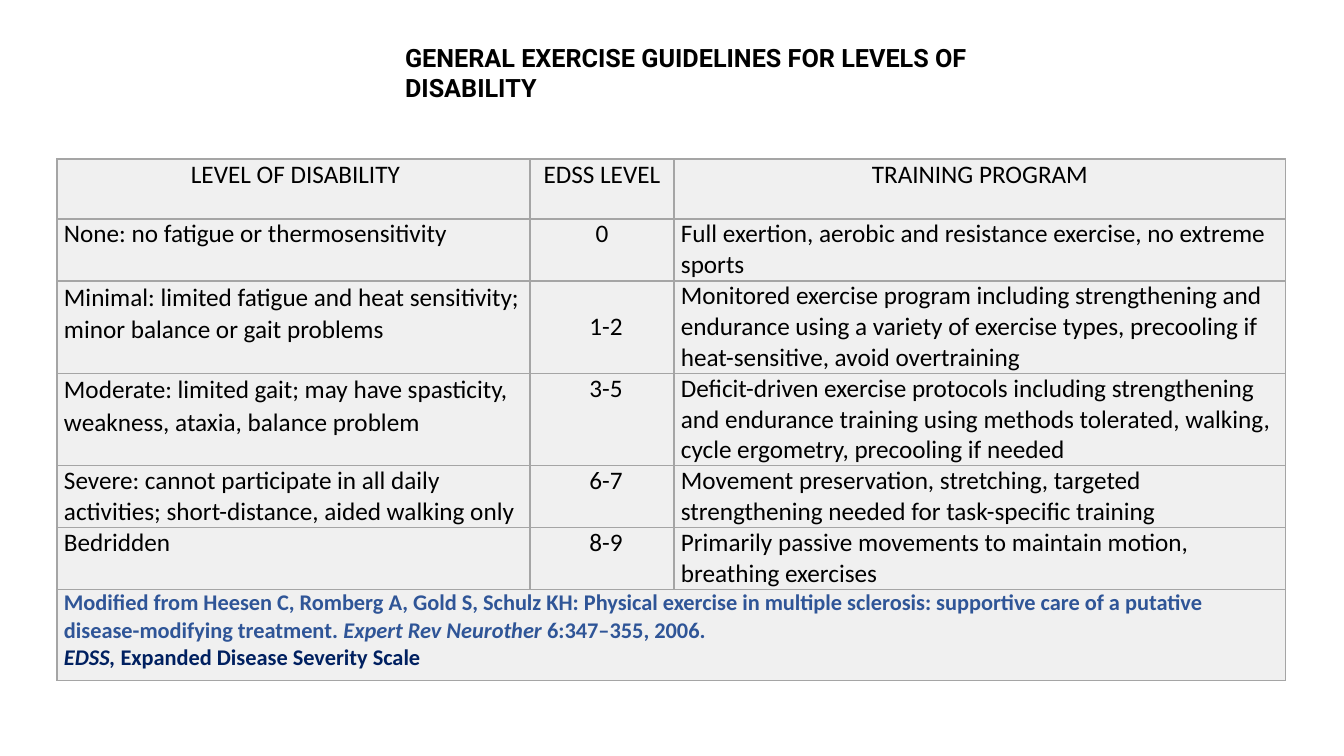
from lxml.etree import SubElement
from pptx import Presentation
from pptx.dml.color import RGBColor as RGB
from pptx.enum.text import MSO_ANCHOR as ANCHOR, MSO_AUTO_SIZE as FIT, PP_ALIGN as ALIGN
from pptx.oxml.ns import qn
from pptx.util import Pt

EMU_PER_PX = 914400 / 100.8
COLORS = {"text": "000000", "cell": "F0F0F0", "border": "A5A5A5",
          "source": "2F5597", "abbrev": "002060"}
COL_WIDTHS = [473, 144, 612]
ROW_HEIGHTS = [60, 62, 92, 92, 62, 62, 91]
HEADER = ["LEVEL OF DISABILITY", "EDSS LEVEL", "TRAINING PROGRAM"]
LEVELS = [
    ("None: no fatigue or thermosensitivity", "0",
     "Full exertion, aerobic and resistance exercise, no extreme sports"),
    ("Minimal: limited fatigue and heat sensitivity; minor balance or gait problems", "1-2",
     "Monitored exercise program including strengthening and endurance using a variety of "
     "exercise types, precooling if heat-sensitive, avoid overtraining"),
    ("Moderate: limited gait; may have spasticity, weakness, ataxia, balance problem", "3-5",
     "Deficit-driven exercise protocols including strengthening and endurance training using "
     "methods tolerated, walking, cycle ergometry, precooling if needed"),
    ("Severe: cannot participate in all daily activities; short-distance, aided walking only",
     "6-7",
     "Movement preservation, stretching, targeted strengthening needed for task-specific training"),
    ("Bedridden", "8-9",
     "Primarily passive movements to maintain motion, breathing exercises"),
]
FOOTNOTE = [
    ("source", [
        ("Modified from Heesen C, Romberg A, Gold S, Schulz KH: Physical exercise in multiple "
         "sclerosis: supportive care of a putative disease-modifying treatment. ", False),
        ("Expert Rev Neurother ", True),
        ("6:347–355, 2006.", False)]),
    ("abbrev", [("EDSS, ", True), ("Expanded Disease Severity Scale", False)]),
]


def px(n):
    return round(n * EMU_PER_PX)


def add_run(p, text, size=18, color="text", bold=False, italic=False, font="Calibri"):
    r = p.add_run()
    r.text = text
    r.font.name, r.font.size = font, Pt(size)
    r.font.bold, r.font.italic = bold, italic
    r.font.color.rgb = RGB.from_string(COLORS[color])


def add_title(s, text):
    sp = s.shapes.title
    sp.left, sp.top, sp.width, sp.height = px(395), px(37), px(637), px(40)
    tf = sp.text_frame
    tf.word_wrap, tf.auto_size, tf.vertical_anchor = True, FIT.NONE, ANCHOR.TOP
    p = tf.paragraphs[0]
    p.alignment = ALIGN.LEFT
    add_run(p, text, bold=True, font="Roboto")


def style_cell(cell):
    cell.margin_left = cell.margin_right = px(7)
    cell.margin_top = cell.margin_bottom = 0
    tc_pr = cell._tc.get_or_add_tcPr()
    for side in ("a:lnL", "a:lnR", "a:lnT", "a:lnB"):
        ln = SubElement(tc_pr, qn(side), w=str(Pt(1)))
        fill = SubElement(ln, qn("a:solidFill"))
        SubElement(fill, qn("a:srgbClr"), val=COLORS["border"])
    cell.fill.solid()
    cell.fill.fore_color.rgb = RGB.from_string(COLORS["cell"])


def fill_cell(cell, text, align=ALIGN.LEFT, indent=0, spacing=None):
    p = cell.text_frame.paragraphs[0]
    p.alignment, p.line_spacing = align, spacing
    p._p.get_or_add_pPr().set("marL", str(px(indent)))
    add_run(p, text)


def fill_footnote(cell):
    tf = cell.text_frame
    for i, (color, runs) in enumerate(FOOTNOTE):
        p = tf.add_paragraph() if i else tf.paragraphs[0]
        for text, italic in runs:
            add_run(p, text, 16, color, True, italic)


def add_guideline_table(s):
    frame = s.shapes.add_table(len(ROW_HEIGHTS), len(COL_WIDTHS), px(57), px(159),
                               px(sum(COL_WIDTHS)), px(sum(ROW_HEIGHTS)))
    table = frame.table
    table.first_row = table.horz_banding = False
    for col, width in zip(table.columns, COL_WIDTHS):
        col.width = px(width)
    for row, height in zip(table.rows, ROW_HEIGHTS):
        row.height = px(height)
    for cell in table.iter_cells():
        style_cell(cell)

    for c, text in enumerate(HEADER):
        fill_cell(table.cell(0, c), text, ALIGN.CENTER, 0 if c else 4)
    for r, (level, edss, program) in enumerate(LEVELS, 1):
        fill_cell(table.cell(r, 0), level, spacing=1.05 if r in (2, 3) else None)
        fill_cell(table.cell(r, 1), edss, ALIGN.CENTER, 8 if r > 1 else 0)
        fill_cell(table.cell(r, 2), program)
    table.cell(2, 1).vertical_anchor = ANCHOR.MIDDLE

    last = len(ROW_HEIGHTS) - 1
    footnote = table.cell(last, 0)
    footnote.merge(table.cell(last, len(COL_WIDTHS) - 1))
    fill_footnote(footnote)


def main():
    prs = Presentation()
    prs.slide_width, prs.slide_height = px(1344), px(756)
    s = prs.slides.add_slide(prs.slide_layouts[5])
    add_title(s, "GENERAL EXERCISE GUIDELINES FOR LEVELS OF DISABILITY")
    add_guideline_table(s)
    prs.save("out.pptx")


if __name__ == "__main__":
    main()
